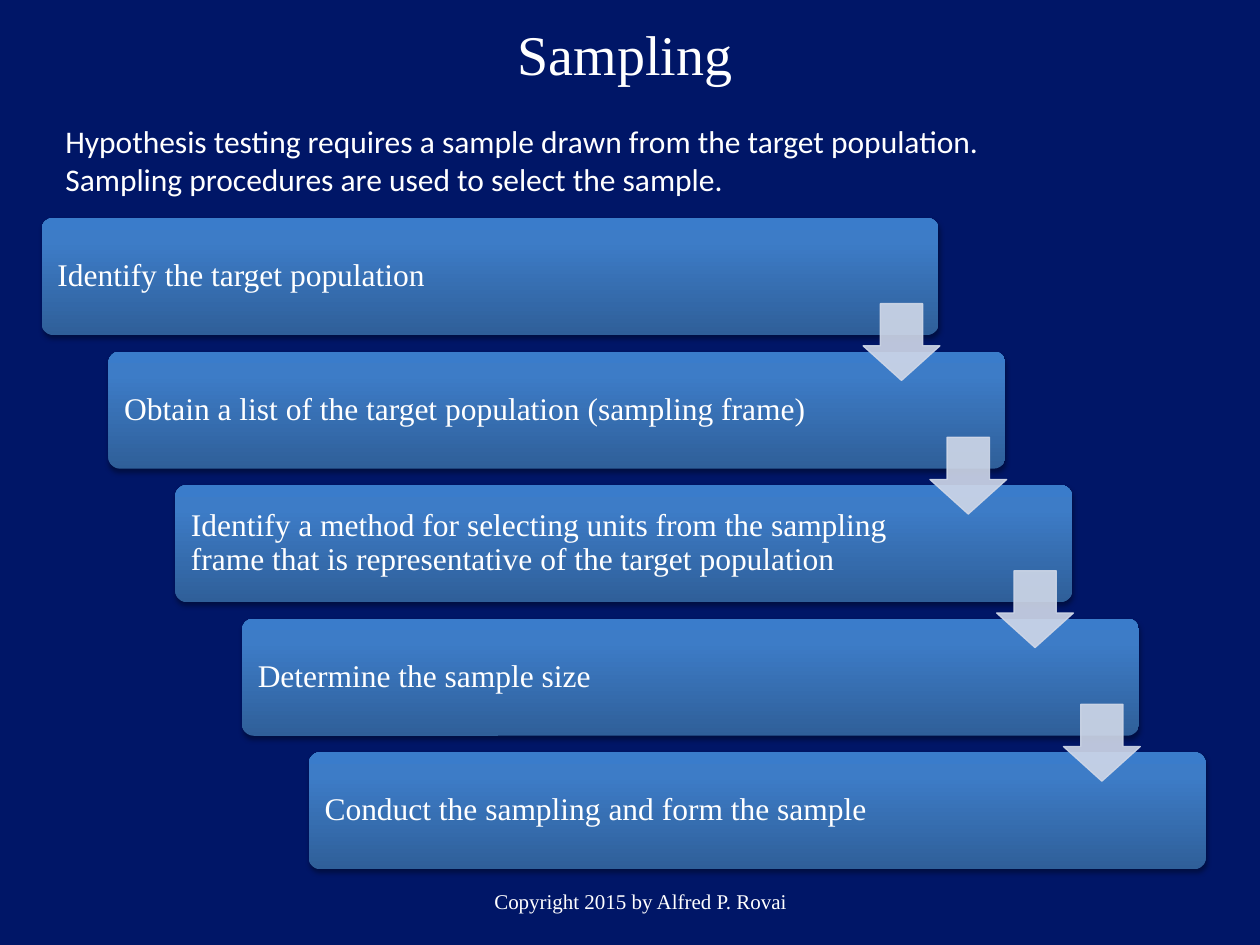
from lxml import etree
from pptx import Presentation
from pptx.dml.color import RGBColor
from pptx.enum.shapes import MSO_SHAPE
from pptx.enum.text import MSO_ANCHOR, PP_ALIGN
from pptx.oxml import parse_xml
from pptx.oxml.ns import nsdecls, qn
from pptx.util import Inches, Pt

ROUND, DOWN = MSO_SHAPE.ROUNDED_RECTANGLE, MSO_SHAPE.DOWN_ARROW
LEFT, CENTER = PP_ALIGN.LEFT, PP_ALIGN.CENTER
TOP, MIDDLE = MSO_ANCHOR.TOP, MSO_ANCHOR.MIDDLE
HEX = {"navy": "001667", "white": "FFFFFF", "low": "2F5F99",
       "mid": "3D7CC7", "high": "3A7CCB", "arrow": "D0D8E8"}
SERIF = "Times New Roman"
GRAD = f"""<a:gradFill {nsdecls("a")} rotWithShape="1"><a:gsLst>
<a:gs pos="0"><a:srgbClr val="{HEX['low']}"/></a:gs>
<a:gs pos="80000"><a:srgbClr val="{HEX['mid']}"/></a:gs>
<a:gs pos="100000"><a:srgbClr val="{HEX['high']}"/></a:gs>
</a:gsLst><a:lin ang="16200000" scaled="0"/></a:gradFill>"""
SHADE = f"""<a:outerShdw {nsdecls("a")} blurRad="39370" dist="22860" dir="5400000"
rotWithShape="0"><a:srgbClr val="000000"><a:alpha val="35000"/></a:srgbClr></a:outerShdw>"""


def write(shape, text, size=18, font=SERIF, align=LEFT, anchor=MIDDLE, space=None):
    frame = shape.text_frame
    frame.word_wrap = True
    frame.vertical_anchor = anchor
    para = frame.paragraphs[0]
    para.alignment = align
    para.line_spacing = space
    run = para.add_run()
    run.text = text
    run.font.size = Pt(size)
    run.font.name = font
    run.font.color.rgb = RGBColor.from_string(HEX["white"])


deck = Presentation()
deck.slide_width, deck.slide_height = Inches(10), Inches(7.5)
slide = deck.slides.add_slide(deck.slide_layouts[5])
slide.background.fill.solid()
slide.background.fill.fore_color.rgb = RGBColor.from_string(HEX["navy"])
shapes = slide.shapes

title = shapes.title
title.left, title.top = Inches(0.42), Inches(0.03)
title.width, title.height = Inches(9.08), Inches(0.78)
write(title, "Sampling", size=32, align=CENTER)

foot = shapes.add_textbox(Inches(1.75), Inches(6.95), Inches(6.67), Inches(0.4))
write(foot, "Copyright 2015 by Alfred P. Rovai", size=12, align=CENTER)

steps = [
    "Identify the target population",
    "Obtain a list of the target population (sampling frame)",
    "Identify a method for selecting units from the sampling frame "
    "that is representative of the target population",
    "Determine the sample size",
    "Conduct the sampling and form the sample",
]
spots = [(0.33 + 0.53 * i, 1.73 + 1.06 * i) for i in range(len(steps))]

for (x, y), step in zip(spots, steps):
    bar = shapes.add_shape(ROUND, Inches(x), Inches(y), Inches(7.12), Inches(0.93))
    bar.adjustments[0] = 0.1
    bar.line.fill.background()
    bar.shadow.inherit = False
    props = bar.element.spPr
    props.find(qn("a:prstGeom")).addnext(parse_xml(GRAD))
    props.find(qn("a:effectLst")).append(parse_xml(SHADE))
    bar.text_frame.margin_left = Inches(0.1)
    bar.text_frame.margin_right = Inches(1.2)
    write(bar, step, space=0.9)

for x, y in spots[:-1]:
    arrow = shapes.add_shape(DOWN, Inches(x + 6.52), Inches(y + 0.68),
                             Inches(0.61), Inches(0.61))
    arrow.adjustments[0], arrow.adjustments[1] = 0.55, 0.45
    arrow.shadow.inherit = False
    arrow.line.width = Pt(0.75)
    for fill in (arrow.fill, arrow.line.fill):
        fill.solid()
        fill.fore_color.rgb = RGBColor.from_string(HEX["arrow"])
    for tint in arrow.element.spPr.iter(qn("a:srgbClr")):
        etree.SubElement(tint, qn("a:alpha"), val="90000")

intro = shapes.add_textbox(Inches(0.42), Inches(0.92), Inches(7.92), Inches(0.71))
write(intro, "Hypothesis testing requires a sample drawn from the target population. "
      "Sampling procedures are used to select the sample.", font="Calibri", anchor=TOP)

deck.save("out.pptx")
